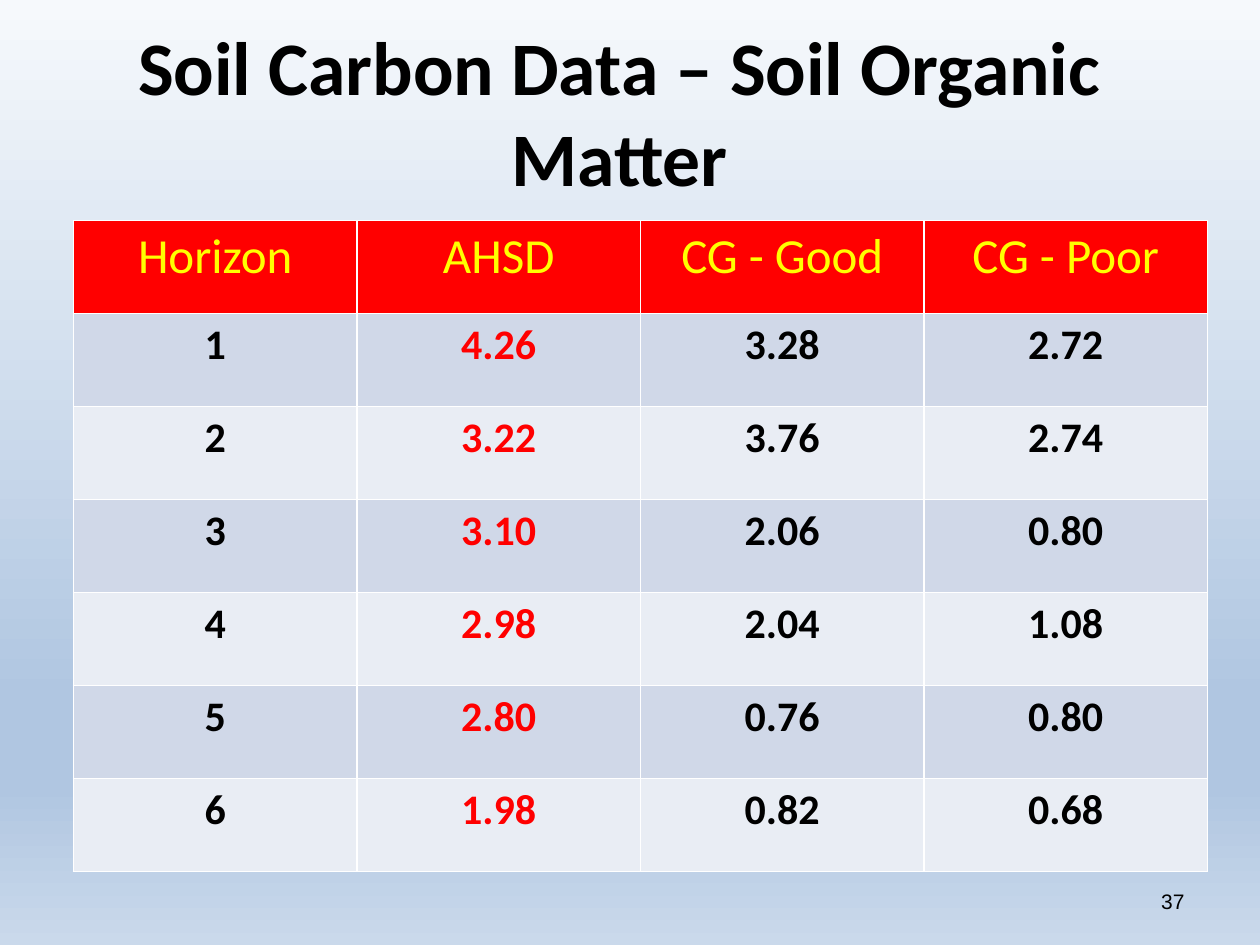
from lxml.etree import SubElement
from pptx import Presentation
from pptx.dml.color import RGBColor
from pptx.enum.text import MSO_ANCHOR as Anchor, PP_ALIGN as Align
from pptx.oxml.ns import qn
from pptx.util import Cm, Pt

BLACK = RGBColor(0x00, 0x00, 0x00)
RED = RGBColor(0xFF, 0x00, 0x00)
YELLOW = RGBColor(0xFF, 0xFF, 0x00)
BAND_DARK = RGBColor(0xD0, 0xD8, 0xE8)
BAND_LIGHT = RGBColor(0xE9, 0xED, 0xF4)
SKY_PALE = RGBColor(0xF6, 0xF9, 0xFC)
SKY_BLUE = RGBColor(0xB0, 0xC6, 0xE1)
SKY_SOFT = RGBColor(0xCA, 0xD9, 0xEB)

BACKGROUND_STOPS = [(0, SKY_PALE), (74, SKY_BLUE), (83, SKY_BLUE), (100, SKY_SOFT)]

TITLE = {"name": "Calibri", "size": Pt(43.2), "bold": True}
HEADER = {"name": "Calibri", "size": Pt(28), "bold": False}
BODY = {"name": "Calibri", "size": Pt(24), "bold": True}
NUMBER = {"name": "Arial", "size": Pt(12), "bold": False}

SOIL_DATA = [
    ("Horizon", "AHSD", "CG - Good", "CG - Poor"),
    ("1", "4.26", "3.28", "2.72"),
    ("2", "3.22", "3.76", "2.74"),
    ("3", "3.10", "2.06", "0.80"),
    ("4", "2.98", "2.04", "1.08"),
    ("5", "2.80", "0.76", "0.80"),
    ("6", "1.98", "0.82", "0.68"),
]
HIGHLIGHT_COLUMN = 1


def write_text(text_frame, text, font_format, color, alignment):
    paragraph = text_frame.paragraphs[0]
    paragraph.alignment = alignment
    run = paragraph.add_run()
    run.text = text
    for attribute, value in font_format.items():
        setattr(run.font, attribute, value)
    run.font.color.rgb = color


def add_text(slide, box, text, font_format, alignment):
    text_frame = slide.shapes.add_textbox(*box).text_frame
    text_frame.word_wrap = True
    text_frame.vertical_anchor = Anchor.MIDDLE
    write_text(text_frame, text, font_format, BLACK, alignment)


def set_background(slide):
    fill = slide.background.fill
    fill.gradient()
    fill.gradient_angle = 270
    # Replace the default two stops
    stop_list = slide.background._cSld.find(".//" + qn("a:gsLst"))
    for stop in list(stop_list):
        stop_list.remove(stop)
    for percent, color in BACKGROUND_STOPS:
        stop = SubElement(stop_list, qn("a:gs"), pos=str(percent * 1000))
        SubElement(stop, qn("a:srgbClr"), val=str(color))


def add_data_table(slide, box, rows):
    # The default table style supplies the white borders
    table = slide.shapes.add_table(len(rows), len(rows[0]), *box).table
    for row_index, row in enumerate(rows):
        for column_index, text in enumerate(row):
            if row_index == 0:
                font_format, color, fill_color = HEADER, YELLOW, RED
            else:
                font_format = BODY
                color = RED if column_index == HIGHLIGHT_COLUMN else BLACK
                fill_color = BAND_DARK if row_index % 2 else BAND_LIGHT
            cell = table.cell(row_index, column_index)
            cell.fill.solid()
            cell.fill.fore_color.rgb = fill_color
            write_text(cell.text_frame, text, font_format, color, Align.CENTER)


def main():
    presentation = Presentation()
    presentation.slide_width, presentation.slide_height = Cm(25.4), Cm(19.05)
    slide = presentation.slides.add_slide(presentation.slide_layouts[6])
    set_background(slide)

    # Title
    add_text(slide, (Cm(1.06), Cm(0.64), Cm(22.86), Cm(3.18)),
             "Soil Carbon Data – Soil Organic Matter", TITLE, Align.CENTER)

    # Organic matter by horizon
    add_data_table(slide, (Cm(1.48), Cm(4.45), Cm(22.86), Cm(13.12)), SOIL_DATA)

    # Slide number
    add_text(slide, (Cm(18.2), Cm(17.66), Cm(5.93), Cm(1.01)),
             "37", NUMBER, Align.RIGHT)

    presentation.save("out.pptx")


if __name__ == "__main__":
    main()
